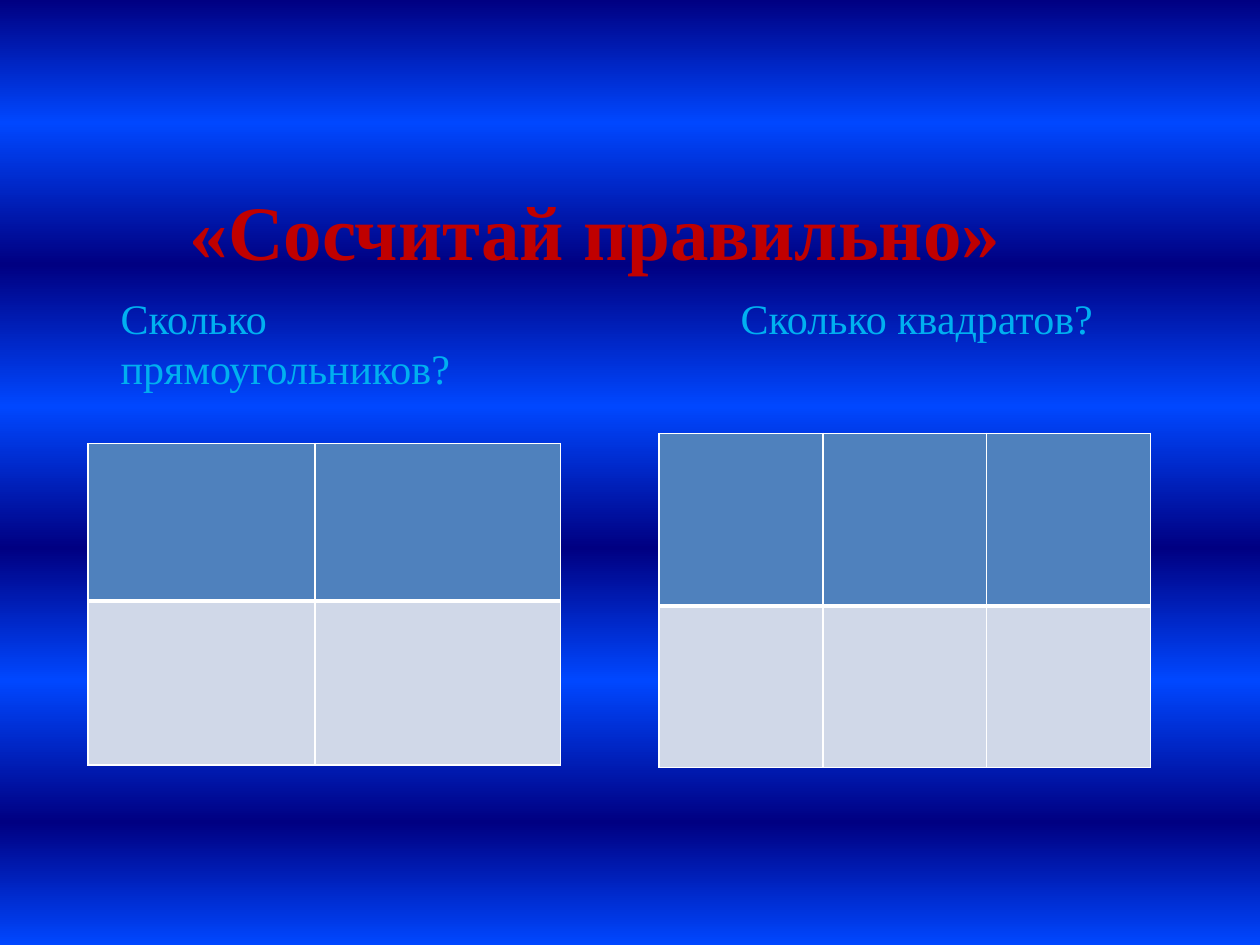
"""Build the "Сосчитай правильно" counting slide with two grids."""
import pptx
import pptx.dml.color
import pptx.enum.text
import pptx.oxml.ns
import pptx.util
from lxml import etree

Inches, Pt = pptx.util.Inches, pptx.util.Pt
RGBColor = pptx.dml.color.RGBColor
PP_ALIGN, ANCHOR = pptx.enum.text.PP_ALIGN, pptx.enum.text.MSO_ANCHOR
qn = pptx.oxml.ns.qn

NAVY = RGBColor(0x00, 0x00, 0x82)
BRIGHT = RGBColor(0x00, 0x47, 0xFF)
RED = RGBColor(0xC0, 0x00, 0x00)
SKY = RGBColor(0x00, 0xB0, 0xF0)
STEEL = RGBColor(0x4F, 0x81, 0xBD)
PALE = RGBColor(0xD0, 0xD8, 0xE8)
WHITE = RGBColor(0xFF, 0xFF, 0xFF)
FONT = "Times New Roman"

TITLE = ("«Сосчитай правильно»", (0.78, 1.41, 7.89, 0.84))
QUESTIONS = [
    ("Сколько прямоугольников?", (0.86, 2.27, 3.82, 0.91)),
    ("Сколько квадратов?", (5.78, 2.27, 3.75, 0.5)),
]
GRIDS = [
    {"at": (0.7, 3.52), "cols": (1.8, 1.95), "rows": (1.25, 1.3)},
    {"at": (5.23, 3.44), "cols": (1.3, 1.3, 1.3), "rows": (1.37, 1.28)},
]
STOPS = (0, 13, 28, 43, 58, 72, 87, 100)


def add_color(parent, color):
    etree.SubElement(parent, qn("a:srgbClr"), val=str(color))


def paint_background(s):
    fill = s.background.fill
    fill.gradient()
    fill.gradient_angle = 270
    stops = next(s.element.iter(qn("a:gsLst")))
    for stop in list(stops):
        stops.remove(stop)
    for i, pos in enumerate(STOPS):
        stop = etree.SubElement(stops, qn("a:gs"), pos=str(pos * 1000))
        add_color(stop, BRIGHT if i % 2 else NAVY)


def write(sp, text, size, color, bold=False, align=PP_ALIGN.LEFT):
    tf = sp.text_frame
    tf.word_wrap = True
    p = tf.paragraphs[0]
    p.text = text
    p.alignment = align
    p.font.name, p.font.size, p.font.bold = FONT, Pt(size), bold
    p.font.color.rgb = color


def style_cell(cell, header):
    tcPr = cell._tc.get_or_add_tcPr()
    widths = {"L": 1, "R": 1, "T": 1 if header else 3, "B": 3 if header else 1}
    for side, width in widths.items():
        ln = etree.SubElement(tcPr, qn("a:ln" + side), w=str(Pt(width)))
        add_color(etree.SubElement(ln, qn("a:solidFill")), WHITE)
    cell.fill.solid()
    cell.fill.fore_color.rgb = STEEL if header else PALE


def add_grid(s, at, cols, rows):
    size = (sum(cols), sum(rows))
    table = s.shapes.add_table(len(rows), len(cols), *map(Inches, at + size)).table
    for column, width in zip(table.columns, cols):
        column.width = Inches(width)
    for i, (row, height) in enumerate(zip(table.rows, rows)):
        row.height = Inches(height)
        for cell in row.cells:
            style_cell(cell, header=i == 0)


def main():
    prs = pptx.Presentation()
    prs.slide_width, prs.slide_height = Inches(10), Inches(7.5)
    s = prs.slides.add_slide(prs.slide_layouts[5])
    paint_background(s)

    text, box = TITLE
    title = s.shapes.title
    title.left, title.top, title.width, title.height = map(Inches, box)
    write(title, text, 44, RED, bold=True, align=PP_ALIGN.CENTER)
    title.text_frame.vertical_anchor = ANCHOR.TOP

    for text, box in QUESTIONS:
        write(s.shapes.add_textbox(*map(Inches, box)), text, 24, SKY)
    for grid in GRIDS:
        add_grid(s, **grid)
    prs.save("out.pptx")


if __name__ == "__main__":
    main()
